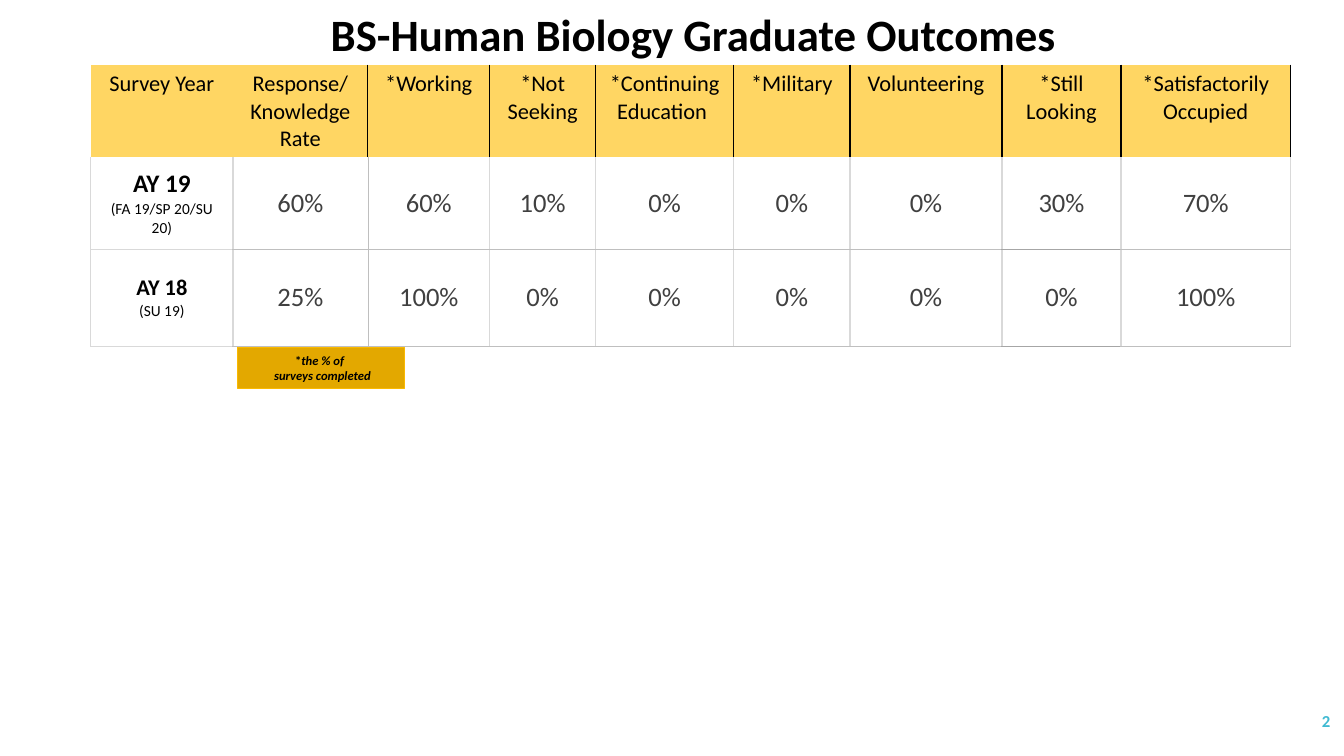
"""Build the graduate outcomes slide."""
import lxml.etree
import pptx
import pptx.dml.color
import pptx.enum.shapes
import pptx.enum.text
import pptx.oxml.ns
import pptx.util

Cm = pptx.util.Cm
Pt = pptx.util.Pt
Align = pptx.enum.text.PP_ALIGN
Anchor = pptx.enum.text.MSO_ANCHOR
qn = pptx.oxml.ns.qn


def paint(target, code):
    target.rgb = pptx.dml.color.RGBColor.from_string(code)


class Page:
    base = {"name": "Calibri", "bold": False, "italic": False}
    gold, white = "FFD663", "FFFFFF"
    black, dark, pale, mid, accent = "000000", "404040", "D9D9D9", "BFBFBF", "A6A6A6"
    teal, amber, rim = "40BAD2", "E3A800", "FAB900"

    def __init__(self, deck):
        self.slide = deck.slides.add_slide(deck.slide_layouts[5])
        self.shapes = self.slide.shapes

    def label(self, frame, lines, align, color=black, after=0):
        frame.word_wrap = True
        for i, runs in enumerate(lines):
            para = frame.paragraphs[0] if i == 0 else frame.add_paragraph()
            para.alignment = align
            para.space_after = Pt(after)
            for text, size, style in runs:
                run = para.add_run()
                run.text = text
                look = {**self.base, "size": Pt(size), **style}
                for key, value in look.items():
                    setattr(run.font, key, value)
                paint(run.font.color, color)

    def title(self, box, text):
        shape = self.shapes.title
        for key, value in zip(("left", "top", "width", "height"), box):
            setattr(shape, key, Cm(value))
        shape.text_frame.vertical_anchor = Anchor.TOP
        self.label(shape.text_frame, [[(text, 32, {"bold": True})]], Align.LEFT)

    def number(self, box, text):
        frame = self.shapes.add_textbox(*map(Cm, box)).text_frame
        frame.vertical_anchor = Anchor.MIDDLE
        self.label(frame, [[(text, 12, {"bold": True})]], Align.RIGHT, self.teal, 6)

    def note(self, box, lines):
        kind = pptx.enum.shapes.MSO_SHAPE.RECTANGLE
        shape = self.shapes.add_shape(kind, *map(Cm, box))
        shape.shadow.inherit = False
        shape.fill.solid()
        paint(shape.fill.fore_color, self.amber)
        paint(shape.line.color, self.rim)
        shape.line.width = Pt(0.75)
        shape.text_frame.vertical_anchor = Anchor.MIDDLE
        self.label(shape.text_frame, lines, Align.CENTER)

    def upright(self, row, edge):
        if row == 0:
            return (self.black, 1) if edge > 1 else None
        return (self.mid, 0.25) if edge == 2 else (self.pale, 1)

    def level(self, edge, col):
        special = {0: (self.pale, 1), 7: (self.accent, 1)}
        return special.get(col, (self.mid, 0.25)) if edge > 1 else None

    def border(self, cell, row, col):
        sides = {
            "a:lnL": self.upright(row, col),
            "a:lnR": self.upright(row, col + 1),
            "a:lnT": self.level(row, col),
            "a:lnB": self.level(row + 1, col),
        }
        props = cell._tc.get_or_add_tcPr()
        for tag, look in sides.items():
            line = lxml.etree.SubElement(props, qn(tag))
            if look is None:
                lxml.etree.SubElement(line, qn("a:noFill"))
                continue
            color, width = look
            line.set("w", str(int(Pt(width))))
            fill = lxml.etree.SubElement(line, qn("a:solidFill"))
            lxml.etree.SubElement(fill, qn("a:srgbClr")).set("val", color)

    def table(self, left, top, cols, rows, data):
        box = map(Cm, (left, top, sum(cols), sum(rows)))
        grid = self.shapes.add_table(len(rows), len(cols), *box).table
        grid.first_row = grid.horz_banding = False
        for col, width in zip(grid.columns, cols):
            col.width = Cm(width)
        for row, height in zip(grid.rows, rows):
            row.height = Cm(height)
        for r, row in enumerate(data):
            for c, lines in enumerate(row):
                cell = grid.cell(r, c)
                look = {
                    "margin_left": Cm(0.3), "margin_right": Cm(0.3),
                    "margin_top": Cm(0.15), "margin_bottom": Cm(0.15),
                    "vertical_anchor": Anchor.MIDDLE if r else Anchor.TOP,
                }
                for key, value in look.items():
                    setattr(cell, key, value)
                self.border(cell, r, c)
                cell.fill.solid()
                paint(cell.fill.fore_color, self.white if r else self.gold)
                color = self.dark if r and c else self.black
                self.label(cell.text_frame, lines, Align.CENTER, color)


def main():
    deck = pptx.Presentation()
    deck.slide_width, deck.slide_height = Cm(33.87), Cm(19.05)
    page = Page(deck)
    heads = [
        ["Survey Year"], ["Response/", "Knowledge", "Rate"], ["*Working"],
        ["*Not", "Seeking"], ["*Continuing Education "], ["*Military"],
        ["Volunteering"], ["*Still Looking"], ["*Satisfactorily", "Occupied"],
    ]
    years = [
        ("AY 19", 18, "(FA 19/SP 20/SU 20)", (60, 60, 10, 0, 0, 0, 30, 70)),
        ("AY 18", 16, "(SU 19)", (25, 100, 0, 0, 0, 0, 0, 100)),
    ]
    data = [[[[(text, 16, {})] for text in head] for head in heads]]
    for year, size, terms, rates in years:
        first = [[(year, size, {"bold": True})], [(terms, 11, {})]]
        data.append([first] + [[[(f"{rate}%", 19, {})]] for rate in rates])
    cols = [3.58, 3.4, 3.07, 2.67, 3.48, 2.93, 3.83, 3, 4.27]
    page.number((29.54, 17.65, 4.24, 1.02), "2")
    page.table(2.29, 1.63, cols, [2.32, 2.32, 2.44], data)
    bold, slant = {"bold": True}, {"bold": True, "italic": True}
    page.note((5.98, 8.76, 4.22, 1.02), [
        [("*", 9, bold), ("the % of ", 9, slant)],
        [(" surveys completed", 9, slant)],
    ])
    page.title((8.08, 0.03, 20.47, 1.63), "BS-Human Biology Graduate Outcomes")
    deck.save("out.pptx")


if __name__ == "__main__":
    main()
